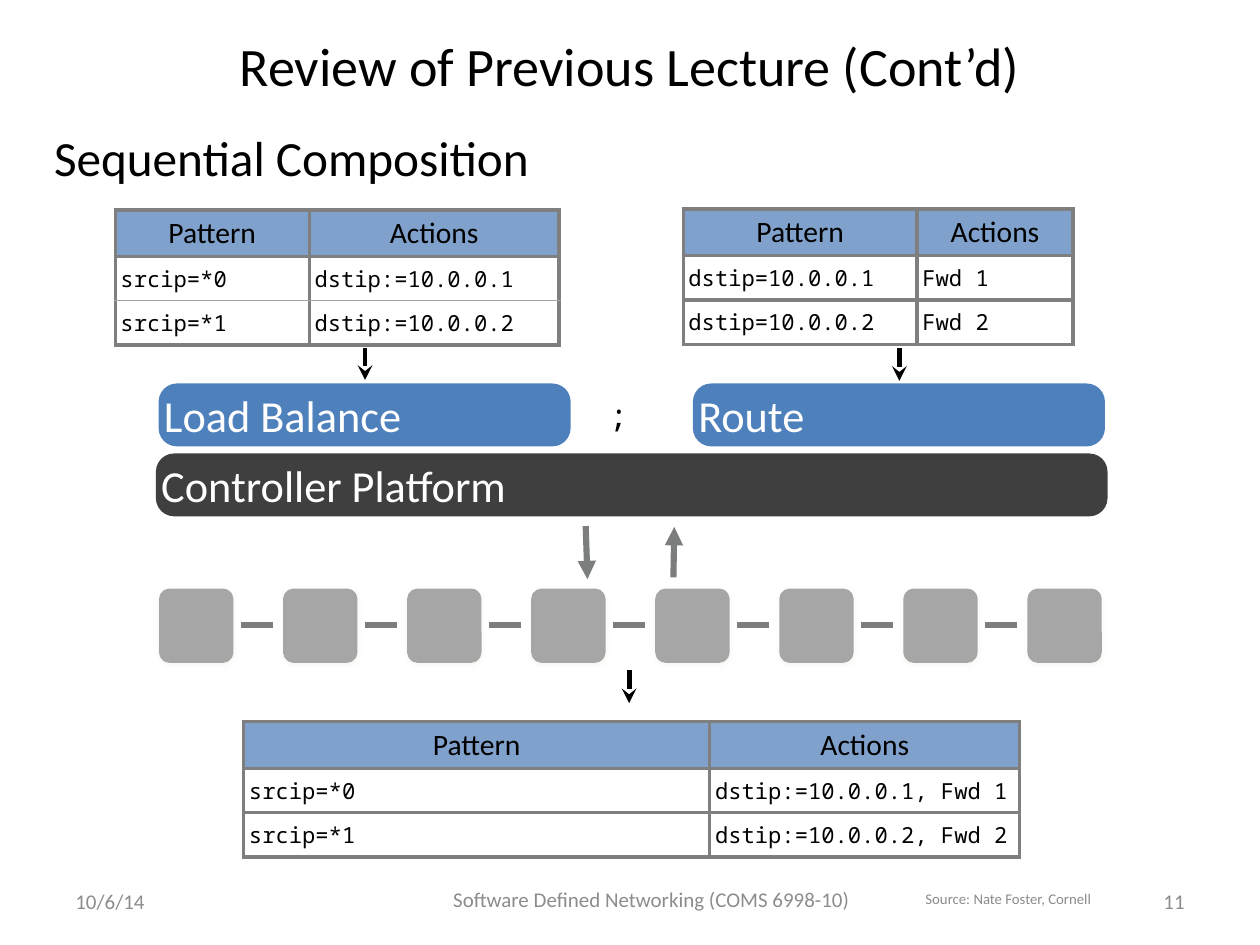
"""Builds the review slide on sequential composition of network policies."""
from lxml import etree
from pptx import Presentation, util as u
from pptx.dml.color import RGBColor
from pptx.enum import shapes, text
from pptx.oxml.ns import qn

W, H = 14.22, 10.67
SANS, MONO = "Calibri", "Noto Sans Mono"
BLACK, WHITE, GREY, WIRE, EDGE = "000000", "FFFFFF", "8C8C8C", "7C7E7E", "7F7F7F"
SWITCH, HEADER, THIN = "A6A6A6", "80A1CB", "A4A5A4"
LEFT, CENTER, RIGHT = text.PP_ALIGN.LEFT, text.PP_ALIGN.CENTER, text.PP_ALIGN.RIGHT
MIDDLE, BOTTOM = text.MSO_ANCHOR.MIDDLE, text.MSO_ANCHOR.BOTTOM

TITLE = "Review of Previous Lecture (Cont’d)"
TOPIC = "Sequential Composition"
HEADINGS = ("Pattern", "Actions")
ROWS = (0.51, 0.5, 0.5)
TABLES = [
    (7.71, 2.36, (2.64, 1.76), EDGE, 3,
     [("dstip=10.0.0.1", "Fwd 1"), ("dstip=10.0.0.2", "Fwd 2")]),
    (1.3, 2.37, (2.19, 2.82), THIN, 1,
     [("srcip=*0", "dstip:=10.0.0.1"), ("srcip=*1", "dstip:=10.0.0.2")]),
    (2.75, 8.15, (5.26, 3.5), EDGE, 3,
     [("srcip=*0", "dstip:=10.0.0.1, Fwd 1"), ("srcip=*1", "dstip:=10.0.0.2, Fwd 2")]),
]
BARS = [
    ("Controller Platform", 1.76, 5.12, 10.74, "3F3F3F", BOTTOM),
    ("Load Balance", 1.79, 4.33, 4.65, "4E81BC", MIDDLE),
    ("Route", 7.82, 4.33, 4.65, "4E81BC", MIDDLE),
]
BAR_H = 0.71
SWITCHES, SWITCH_X, SWITCH_Y, SIDE, PITCH = 8, 1.83, 6.68, 0.77, 1.4
WIRE_X, WIRE_Y, WIRE_W = 2.72, 7.06, 0.36
ARROWS = [
    (6.61, 5.94, 6.63, 6.54, WIRE, 5, "triangle"),
    (7.6, 6.52, 7.61, 5.95, WIRE, 5, "triangle"),
    (10.15, 3.93, 10.15, 4.3, BLACK, 4, "stealth"),
    (4.12, 3.93, 4.12, 4.29, BLACK, 4, "stealth"),
    (7.1, 7.56, 7.1, 7.94, BLACK, 4, "stealth"),
]
FOOTERS = [
    ("11", (10.19, 9.89, 3.32, 0.57), 17, RIGHT),
    ("Source: Nate Foster, Cornell", (8.89, 9.84, 4.98, 0.62), 12, CENTER),
    ("10/6/14", (0.71, 9.89, 3.32, 0.57), 17, LEFT),
    ("Software Defined Networking (COMS 6998-10)", (4.86, 9.84, 4.98, 0.62), 17, CENTER),
]


def rgb(color):
    return RGBColor.from_string(color)


def inches(*lengths):
    return [u.Inches(n) for n in lengths]


def place(sp, box):
    sp.left, sp.top, sp.width, sp.height = inches(*box)


def add_run(p, words, size, font, color, align):
    p.alignment = align
    r = p.add_run()
    r.text = words
    r.font.size, r.font.name = u.Pt(size), font
    r.font.color.rgb = rgb(color)


def write(sp, words, size, color=BLACK, align=LEFT, anchor=MIDDLE,
          inset=(0, 0), font=SANS, wrap=True):
    tf = sp.text_frame
    tf.word_wrap, tf.auto_size = wrap, text.MSO_AUTO_SIZE.NONE
    tf.vertical_anchor = anchor
    tf.margin_left, tf.margin_right = inches(inset[0], inset[0])
    tf.margin_top, tf.margin_bottom = inches(inset[1], inset[1])
    add_run(tf.paragraphs[0], words, size, font, color, align)


def add_box(s, box, color):
    sp = s.shapes.add_shape(shapes.MSO_SHAPE.ROUNDED_RECTANGLE, *inches(*box))
    sp.shadow.inherit = False
    sp.fill.solid()
    sp.fill.fore_color.rgb = rgb(color)
    return sp


def add_line(s, x1, y1, x2, y2, color, width, tip=None):
    ln = s.shapes.add_connector(shapes.MSO_CONNECTOR.STRAIGHT, *inches(x1, y1, x2, y2))
    ln.line.color.rgb, ln.line.width = rgb(color), u.Pt(width)
    if tip:
        etree.SubElement(ln.line._get_or_add_ln(), qn("a:tailEnd"), type=tip)
    etree.SubElement(ln._element.spPr, qn("a:effectLst"))


def add_border(cell, side, color, width):
    ln = etree.SubElement(cell._tc.get_or_add_tcPr(), qn("a:ln" + side), w=str(u.Pt(width)))
    etree.SubElement(etree.SubElement(ln, qn("a:solidFill")), qn("a:srgbClr"), val=color)


def add_table(s, x, y, cols, inner_color, inner_width, rules):
    grid = [HEADINGS, *rules]
    frame = s.shapes.add_table(len(grid), len(cols), *inches(x, y, sum(cols), sum(ROWS)))
    table = frame.table
    for col, width in zip(table.columns, cols):
        col.width = u.Inches(width)
    for i, (words, height) in enumerate(zip(grid, ROWS)):
        table.rows[i].height = u.Inches(height)
        inner, outer = (inner_color, inner_width), (EDGE, 3)
        edges = {"L": outer, "R": outer,
                 "T": inner if i == 2 else outer, "B": inner if i == 1 else outer}
        for j, word in enumerate(words):
            cell = table.cell(i, j)
            for side, (color, width) in edges.items():
                add_border(cell, side, color, width)
            cell.fill.solid()
            cell.fill.fore_color.rgb = rgb(WHITE if i else HEADER)
            cell.vertical_anchor = MIDDLE
            cell.margin_left, cell.margin_right, cell.margin_top, cell.margin_bottom = inches(*[0.06] * 4)
            size, font, align = (18, MONO, LEFT) if i else (24, SANS, CENTER)
            add_run(cell.text_frame.paragraphs[0], word, size, font, BLACK, align)


def add_switch(s, i):
    sp = add_box(s, (SWITCH_X + i * PITCH, SWITCH_Y, SIDE, SIDE), SWITCH)
    sp.adjustments[0] = 0.11
    sp.line.color.rgb, sp.line.width = rgb(SWITCH), u.Pt(5)
    shadow = etree.SubElement(sp._element.spPr.find(qn("a:effectLst")), qn("a:outerShdw"),
                              blurRad=str(u.Pt(3)), dist=str(u.Pt(1.6)), dir="5400000")
    color = etree.SubElement(shadow, qn("a:srgbClr"), val="EEECE1")
    etree.SubElement(color, qn("a:alpha"), val="38000")


def main():
    prs = Presentation()
    prs.slide_width, prs.slide_height = inches(W, H)
    s = prs.slides.add_slide(prs.slide_layouts[1])

    title, body = s.placeholders
    place(title, (0.71, 0, 12.8, 1.47))
    write(title, TITLE, 44, align=CENTER, inset=(0.14, 0.07))
    place(body, (0.61, 1.07, W - 0.61, 1.39))
    p = body.text_frame.paragraphs[0]
    pPr = p._p.get_or_add_pPr()
    pPr.set("marL", "0")
    pPr.set("indent", "0")
    etree.SubElement(pPr, qn("a:buNone"))
    p.space_before = u.Pt(0)
    write(body, TOPIC, 40)

    for i in range(SWITCHES):
        add_switch(s, i)
    for i in range(SWITCHES - 1):
        x = WIRE_X + i * PITCH
        add_line(s, x, WIRE_Y, x + WIRE_W, WIRE_Y, WIRE, 5)
    for words, x, y, width, color, anchor in BARS:
        sp = add_box(s, (x, y, width, BAR_H), color)
        sp.adjustments[0] = 0.29
        sp.line.fill.background()
        write(sp, words, 36, WHITE, anchor=anchor)
    for table in TABLES:
        add_table(s, *table)
    for arrow in ARROWS:
        add_line(s, *arrow)

    semicolon = s.shapes.add_textbox(*inches(6.87, 4.46, 0.2, 0.44))
    write(semicolon, ";", 26, font=MONO, wrap=False)
    for words, box, size, align in FOOTERS:
        write(s.shapes.add_textbox(*inches(*box)), words, size, GREY, align, inset=(0.14, 0.07))
    prs.save("out.pptx")


if __name__ == "__main__":
    main()
